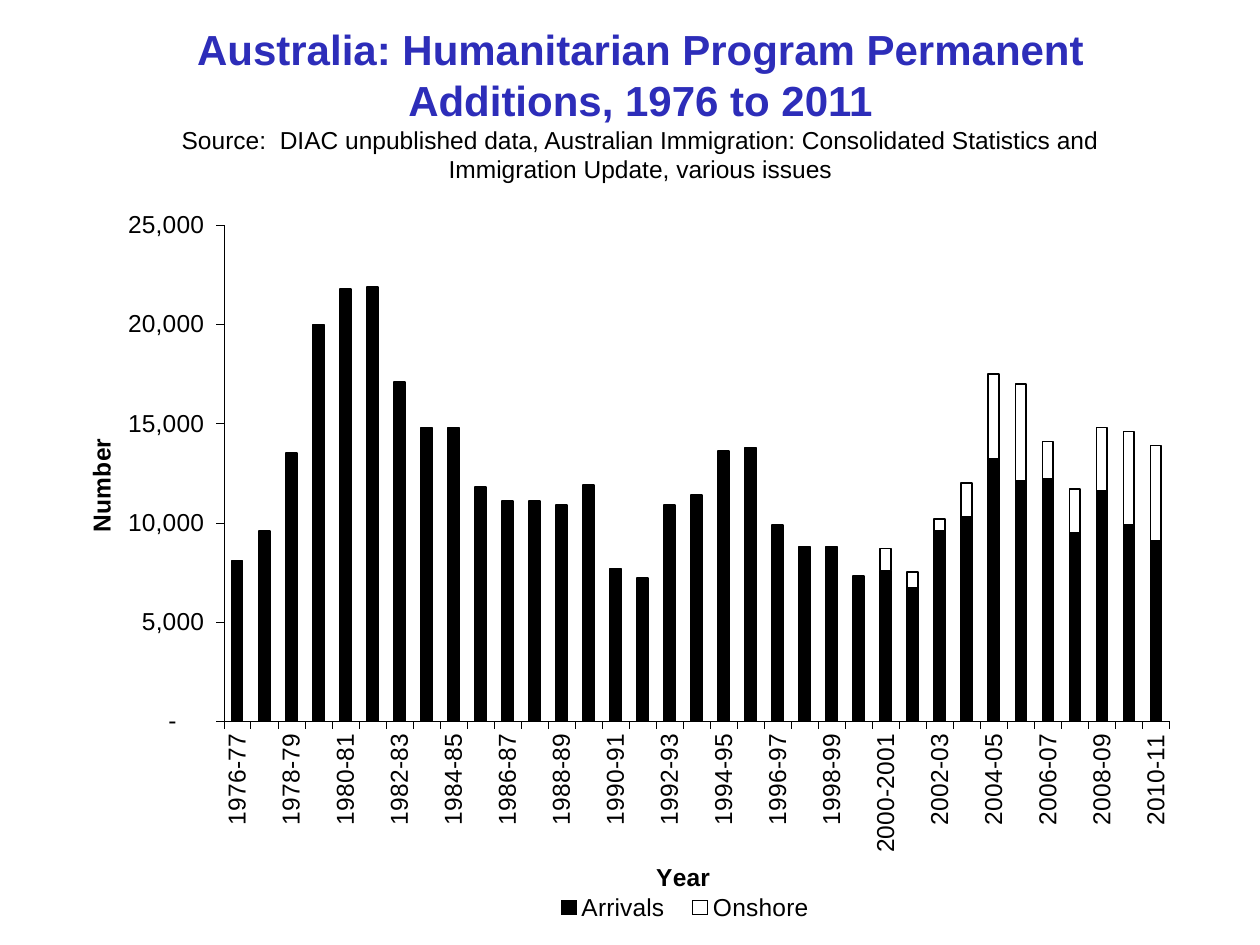
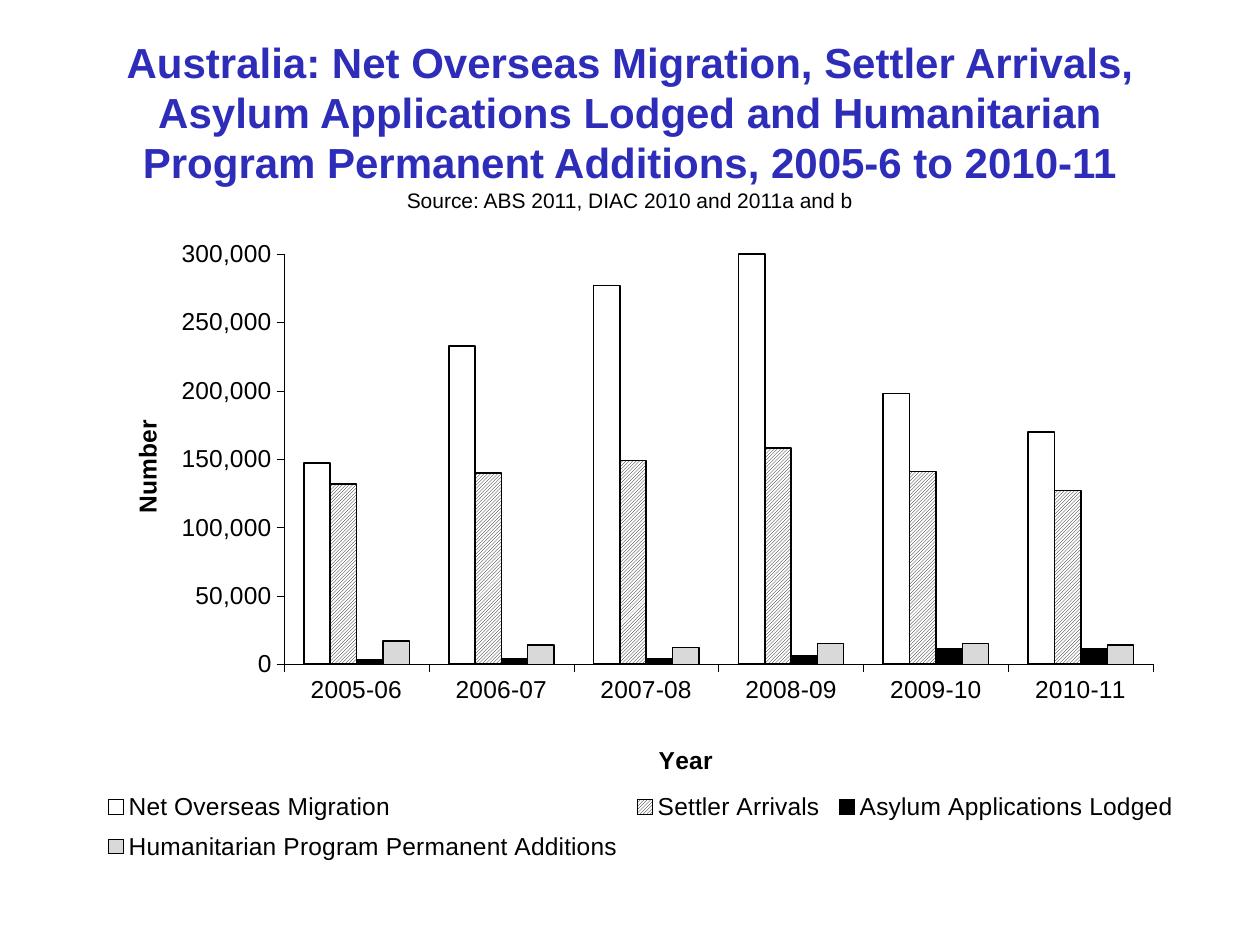
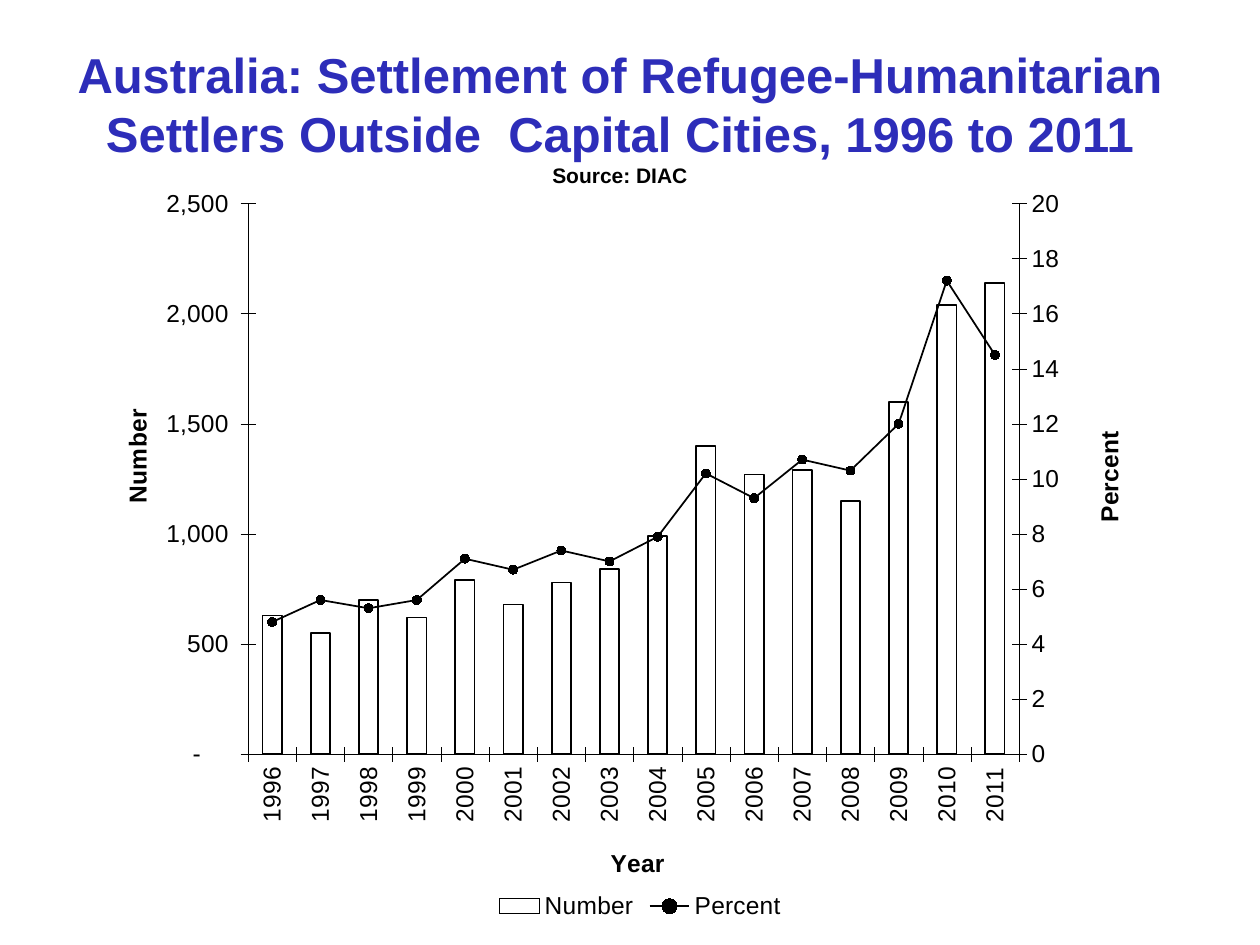
import copy
import pptx
import pptx.chart.axis
import pptx.chart.data
import pptx.chart.series
import pptx.dml.color
import pptx.enum.chart
import pptx.enum.dml
import pptx.enum.text
import pptx.oxml
import pptx.oxml.ns
import pptx.util

Pt = pptx.util.Pt
RGB = pptx.dml.color.RGBColor
qn = pptx.oxml.ns.qn
XL = pptx.enum.chart

BLUE = RGB(0x2D, 0x2D, 0xB9)
BLACK = RGB(0, 0, 0)
WHITE = RGB(0xFF, 0xFF, 0xFF)
GREY = RGB(0xD9, 0xD9, 0xD9)
FONT = "Arial"
TICKS = {"out": XL.XL_TICK_MARK.OUTSIDE, "cross": XL.XL_TICK_MARK.CROSS}


def add_text(p, text, size=14, bold=True, color=BLACK):
    r = p.add_run()
    r.text = text
    r.font.name, r.font.size, r.font.bold = FONT, Pt(size), bold
    r.font.color.rgb = color


def set_layout(el, index, box, target=""):
    """Place a chart part by x, y, width, height in percent of the chart."""
    for old in el.findall(qn("c:layout")):
        el.remove(old)
    modes = "".join(f'<c:{m}Mode val="edge"/>' for m in "xy")
    sizes = "".join(f'<c:{n} val="{v / 100:.3f}"/>' for n, v in zip("xywh", box))
    el.insert(index, pptx.oxml.parse_xml(
        f'<c:layout {pptx.oxml.ns.nsdecls("c")}><c:manualLayout>'
        f'{target}{modes}{sizes}</c:manualLayout></c:layout>'))


# Content; boxes are in points, layouts in percent of the chart.
# An axis is: title, title position, number format, maximum, major unit.
slides = [
    dict(
        title="Australia: Humanitarian Program Permanent Additions, 1976 to 2011",
        source="Source:  DIAC unpublished data, Australian Immigration: "
               "Consolidated Statistics and Immigration Update, various issues",
        title_box=(60, 37.5, 612, 90), title_size=24, bottom=50,
        source_size=14, source_bold=False,
        kind=XL.XL_CHART_TYPE.COLUMN_STACKED, chart_box=(20, 111.5, 657.5, 420),
        plot=(16.4, 4.1, 82.2, 67.5), year=(53.6, 90), tick="out", overlap=100,
        axes=[("Number", (4, 32.5), '_(* #,##0_);_(* \\(#,##0\\);_(* "-"??_);_(', 25000, 5000)],
        legend=(44, 95, 25, 4.5), side=XL.XL_LEGEND_POSITION.BOTTOM,
        rotated=True, skip=2,
        cats=[f"{y}-2000" if y == 1999 else f"{y}-2001" if y == 2000
              else f"{y}-{(y + 1) % 100:02d}" for y in range(1976, 2011)],
        series=[
            ("Arrivals", BLACK, 1,
             [8100, 9600, 13500, 20000, 21800, 21900, 17100, 14800, 14800, 11800,
              11100, 11100, 10900, 11900, 7700, 7200, 10900, 11400, 13600, 13800,
              9900, 8800, 8800, 7300, 7600, 6700, 9600, 10300, 13200, 12100,
              12200, 9500, 11600, 9900, 9100]),
            ("Onshore", WHITE, 1,
             [None] * 24 + [1100, 800, 600, 1700, 4300, 4900, 1900, 2200, 3200, 4700, 4800]),
        ]),
    dict(
        title="Australia: Net Overseas Migration, Settler Arrivals, Asylum Applications "
              "Lodged and Humanitarian Program Permanent Additions, 2005-6 to 2010-11",
        source="Source: ABS 2011, DIAC 2010 and 2011a and b",
        title_box=(54, 26, 612, 90), title_size=24, bottom=3.6,
        source_size=12, source_bold=False,
        kind=XL.XL_CHART_TYPE.COLUMN_CLUSTERED, chart_box=(42.5, 134, 641, 388),
        plot=(18.7, 2.9, 77.5, 60.4), year=(51.7, 74.5), tick="out", overlap=0,
        axes=[("Number", (4.7, 26.6), "#,##0", 300000, 50000)],
        legend=(2, 80.5, 97, 13.5), side=XL.XL_LEGEND_POSITION.RIGHT,
        rotated=False, skip=1,
        cats=[f"{y}-{y % 100 + 1:02d}" for y in range(2005, 2011)],
        series=[
            ("Net Overseas Migration", None, 1,
             [147000, 233000, 277000, 300000, 198000, 170000]),
            ("Settler Arrivals", "hatch", 1,
             [132000, 140000, 149000, 158000, 141000, 127000]),
            ("Asylum Applications Lodged", BLACK, 1,
             [3000, 4000, 4000, 6000, 11000, 11000]),
            ("Humanitarian Program Permanent Additions", GREY, 0.75,
             [17000, 14000, 12000, 15000, 15000, 14000]),
        ]),
    dict(
        title="Australia: Settlement of Refugee-Humanitarian Settlers "
              "Outside  Capital Cities, 1996 to 2011",
        source="Source: DIAC",
        title_box=(28, 28, 652.5, 90), title_size=28, bottom=17,
        source_size=12, source_bold=True,
        kind=XL.XL_CHART_TYPE.COLUMN_CLUSTERED, chart_box=(48, 100, 629.5, 430.5),
        plot=(14.9, 3.8, 70, 73.1), year=(47.4, 88.7), tick="cross", overlap=0,
        axes=[("Number", (3, 30.5), '_-* #,##0_-;\\-* #,##0_-;_-* "-"??_-;_-@_', 2500, 500),
              ("Percent", (91.2, 33.4), "0", 20, 2)],
        legend=(37, 95.5, 27, 4.5), side=XL.XL_LEGEND_POSITION.BOTTOM,
        rotated=True, skip=1,
        cats=[str(y) for y in range(1996, 2012)],
        series=[
            ("Number", WHITE, 1,
             [630, 550, 700, 620, 790, 680, 780, 840, 990, 1400, 1270, 1290,
              1150, 1600, 2040, 2140]),
            ("Percent", BLACK, 1,
             [4.8, 5.6, 5.3, 5.6, 7.1, 6.7, 7.4, 7, 7.9, 10.2, 9.3, 10.7,
              10.3, 12, 17.2, 14.5]),
        ]),
]

prs = pptx.Presentation()
prs.slide_width, prs.slide_height = Pt(720), Pt(540)

for d in slides:
    s = prs.slides.add_slide(prs.slide_layouts[5])

    # Title with its source line
    sp = s.shapes.title
    sp.left, sp.top, sp.width, sp.height = map(Pt, d["title_box"])
    tf = sp.text_frame
    tf.word_wrap = True
    tf.auto_size = pptx.enum.text.MSO_AUTO_SIZE.NONE
    tf.vertical_anchor = pptx.enum.text.MSO_ANCHOR.MIDDLE
    tf.margin_bottom = Pt(d["bottom"])
    add_text(tf.paragraphs[0], d["title"], size=d["title_size"], color=BLUE)
    add_text(tf.add_paragraph(), d["source"], size=d["source_size"], bold=d["source_bold"])
    for p in tf.paragraphs:
        p.alignment = pptx.enum.text.PP_ALIGN.CENTER

    # Chart
    data = pptx.chart.data.CategoryChartData()
    data.categories = d["cats"]
    for name, _, _, values in d["series"]:
        data.add_series(name, values)
    chart = s.shapes.add_chart(d["kind"], *map(Pt, d["chart_box"]), data).chart
    chart.has_title = False
    chart.font.name, chart.font.size = FONT, Pt(14)
    chart.font.color.rgb = BLACK
    bars = chart.plots[0]
    bars.gap_width, bars.overlap, bars.vary_by_categories = 150, d["overlap"], False
    area = chart._chartSpace.find(".//" + qn("c:plotArea"))
    set_layout(area, 0, d["plot"], '<c:layoutTarget val="inner"/>')

    # Second series as a line on a right-hand axis
    value_axes = [chart.value_axis]
    cat_axis = chart.category_axis
    if len(d["axes"]) == 2:
        bar = area.find(qn("c:barChart"))
        line = pptx.oxml.parse_xml(
            f'<c:lineChart {pptx.oxml.ns.nsdecls("c")}><c:grouping val="standard"/>'
            '<c:varyColors val="0"/><c:marker val="1"/>'
            '<c:axId val="301"/><c:axId val="302"/></c:lineChart>')
        ser = bar.findall(qn("c:ser"))[1]
        for invert in ser.findall(qn("c:invertIfNegative")):
            ser.remove(invert)
        line.insert(2, ser)
        bar.addnext(line)
        right = copy.deepcopy(chart.value_axis._element)
        hidden = copy.deepcopy(cat_axis._element)
        chart.value_axis._element.addnext(right)
        right.addnext(hidden)
        for ax, own, other in ((right, "302", "301"), (hidden, "301", "302")):
            ax.find(qn("c:axId")).set("val", own)
            ax.find(qn("c:crossAx")).set("val", other)
        right.find(qn("c:axPos")).set("val", "r")
        right.find(qn("c:crosses")).set("val", "max")
        pptx.chart.axis.CategoryAxis(hidden).visible = False
        value_axes.append(pptx.chart.axis.ValueAxis(right))

    # Axes
    for axis, (_, _, fmt, top, unit) in zip(value_axes, d["axes"]):
        axis.minimum_scale, axis.maximum_scale, axis.major_unit = 0, top, unit
        axis.tick_labels.number_format = fmt
        axis.tick_labels.number_format_is_linked = False
    titles = [("Year", d["year"])] + [a[:2] for a in d["axes"]]
    for axis, (title, place) in zip([cat_axis] + value_axes, titles):
        axis.has_major_gridlines = False
        axis.major_tick_mark = TICKS[d["tick"]]
        axis.minor_tick_mark = XL.XL_TICK_MARK.NONE
        axis.format.line.color.rgb = BLACK
        axis.format.line.width = Pt(0.25)
        axis.tick_labels.font.size = Pt(14)
        tf = axis.axis_title.text_frame
        add_text(tf.paragraphs[0], title)
        if axis is not cat_axis:
            tf._txBody.find(qn("a:bodyPr")).set("rot", "-5400000")
        set_layout(axis.axis_title._element, 1, place)
    if d["rotated"]:
        cat_axis._element.find(qn("c:txPr")).find(qn("a:bodyPr")).set("rot", "-5400000")
    skip = pptx.oxml.parse_xml(
        f'<c:tickLblSkip {pptx.oxml.ns.nsdecls("c")} val="{d["skip"]}"/>')
    cat_axis._element.find(qn("c:noMultiLvlLbl")).addprevious(skip)

    # Series
    all_series = [ser for plot in chart.plots for ser in plot.series]
    for ser, (_, color, width, _) in zip(all_series, d["series"]):
        ser.format.line.color.rgb = BLACK
        ser.format.line.width = Pt(width)
        if isinstance(ser, pptx.chart.series.LineSeries):
            ser.smooth = False
            ser.marker.style, ser.marker.size = XL.XL_MARKER_STYLE.CIRCLE, 5
            ser.marker.format.fill.solid()
            ser.marker.format.fill.fore_color.rgb = color
            ser.marker.format.line.color.rgb = color
            continue
        fill = ser.format.fill
        if color is None:
            fill.background()
        elif color == "hatch":
            fill.patterned()
            fill.pattern = pptx.enum.dml.MSO_PATTERN.LIGHT_UPWARD_DIAGONAL
            fill.fore_color.rgb, fill.back_color.rgb = BLACK, WHITE
        else:
            fill.solid()
            fill.fore_color.rgb = color

    # Legend
    chart.has_legend = True
    chart.legend.position = d["side"]
    chart.legend.include_in_layout = False
    chart.legend.font.size = Pt(14)
    set_layout(chart.legend._element, 1, d["legend"])

prs.save("out.pptx")
